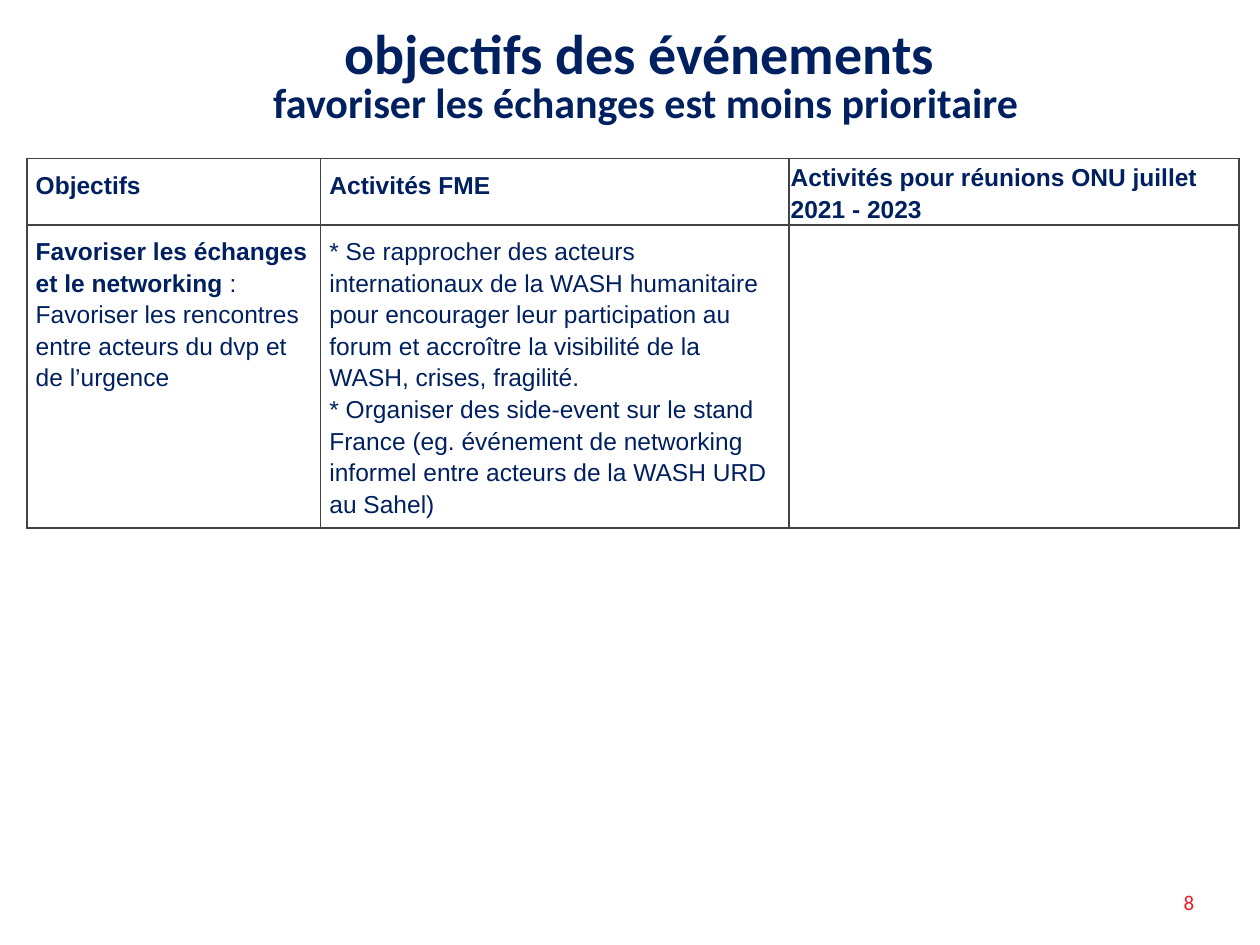
import dataclasses

import lxml.etree
import pptx
import pptx.dml.color
import pptx.enum.text
import pptx.oxml.ns
import pptx.util

Cm = pptx.util.Cm
Pt = pptx.util.Pt
qn = pptx.oxml.ns.qn
ALIGN = pptx.enum.text.PP_ALIGN
MIDDLE = pptx.enum.text.MSO_ANCHOR.MIDDLE

NAVY = "002060"
RED = "ED1C24"
GREY = "434343"


@dataclasses.dataclass
class Cell:
    bold: str = ""
    plain: tuple[str, ...] = ()
    inset: float = 0.18


def tint(code: str) -> pptx.dml.color.RGBColor:
    return pptx.dml.color.RGBColor.from_string(code)


def write(para, text: str, *, size: float, font: str, color: str = NAVY,
          bold: bool = False, align=ALIGN.LEFT, space: float = 1.0) -> None:
    """Add one formatted run to a paragraph."""
    para.alignment = align
    para.line_spacing = space
    run = para.add_run()
    run.text = text
    run.font.size = Pt(size)
    run.font.name = font
    run.font.bold = bold
    run.font.color.rgb = tint(color)


def frame(cell, color: str, width: float) -> None:
    """Draw the four borders of a table cell."""
    props = cell._tc.get_or_add_tcPr()
    for side in ("lnL", "lnR", "lnT", "lnB"):
        line = lxml.etree.SubElement(props, qn(f"a:{side}"), w=str(Pt(width)))
        fill = lxml.etree.SubElement(line, qn("a:solidFill"))
        lxml.etree.SubElement(fill, qn("a:srgbClr"), val=color)


def fill_cell(cell, data: Cell) -> None:
    style = {"size": 14, "font": "Arial", "space": 1.15}
    cell.margin_left = cell.margin_right = Cm(data.inset)
    cell.margin_top = cell.margin_bottom = Cm(data.inset)
    frame(cell, GREY, 1)
    cell.fill.background()
    body = cell.text_frame
    if data.bold:
        write(body.paragraphs[0], data.bold, bold=True, **style)
    for i, text in enumerate(data.plain):
        para = body.add_paragraph() if i else body.paragraphs[0]
        write(para, text, **style)


WIDTHS = (5.92, 9.45, 9.07)
HEIGHTS = (1.32, 6.1)
ROWS = (
    (
        Cell("Objectifs"),
        Cell("Activités FME"),
        Cell("Activités pour réunions ONU juillet 2021 - 2023", inset=0.03),
    ),
    (
        Cell("Favoriser les échanges et le networking",
             (" : Favoriser les rencontres entre acteurs du dvp et de l’urgence",)),
        Cell(plain=(
            "* Se rapprocher des acteurs internationaux de la WASH humanitaire "
            "pour encourager leur participation au forum et accroître la "
            "visibilité de la WASH, crises, fragilité.",
            "* Organiser des side-event sur le stand France (eg. événement de "
            "networking informel entre acteurs de la WASH URD au Sahel)",
        )),
        Cell(),
    ),
)


def main() -> None:
    deck = pptx.Presentation()
    deck.slide_width, deck.slide_height = Cm(25.4), Cm(19.05)
    slide = deck.slides.add_slide(deck.slide_layouts[5])

    # Title
    title = slide.shapes.title
    title.left, title.top = Cm(0), Cm(0)
    title.width, title.height = Cm(25.4), Cm(3.18)
    title.text_frame.auto_size = pptx.enum.text.MSO_AUTO_SIZE.NONE
    title.text_frame.vertical_anchor = MIDDLE
    para = title.text_frame.paragraphs[0]
    props = para._p.get_or_add_pPr()
    props.set("marL", str(Cm(0.64)))
    props.set("indent", "0")
    style = {"font": "Calibri", "bold": True, "align": ALIGN.CENTER, "space": 0.81}
    write(para, "objectifs des événements ", size=32, **style)
    para.add_line_break()
    write(para, "favoriser les échanges est moins prioritaire", size=24, **style)

    # Table
    table = slide.shapes.add_table(
        len(ROWS), len(WIDTHS), Cm(0.54), Cm(3.2),
        Cm(sum(WIDTHS)), Cm(sum(HEIGHTS))).table
    table.horz_banding = False
    for col, width in zip(table.columns, WIDTHS):
        col.width = Cm(width)
    for row, height, cells in zip(table.rows, HEIGHTS, ROWS):
        row.height = Cm(height)
        for cell, data in zip(row.cells, cells):
            fill_cell(cell, data)

    # Page number
    box = slide.shapes.add_textbox(Cm(23.4), Cm(17.68), Cm(1.14), Cm(1.02))
    box.text_frame.word_wrap = True
    box.text_frame.vertical_anchor = MIDDLE
    write(box.text_frame.paragraphs[0], "8", size=12, font="Calibri",
          color=RED, align=ALIGN.CENTER)

    deck.save("out.pptx")


if __name__ == "__main__":
    main()
